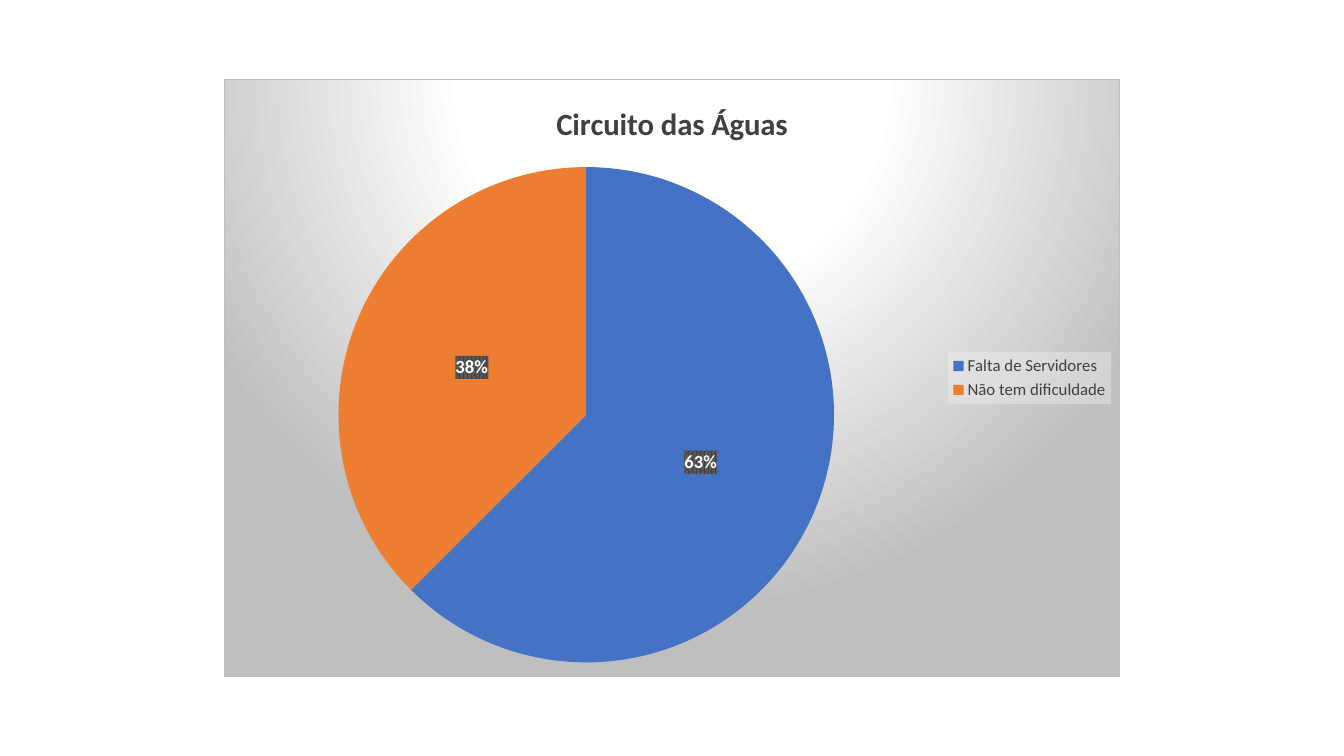
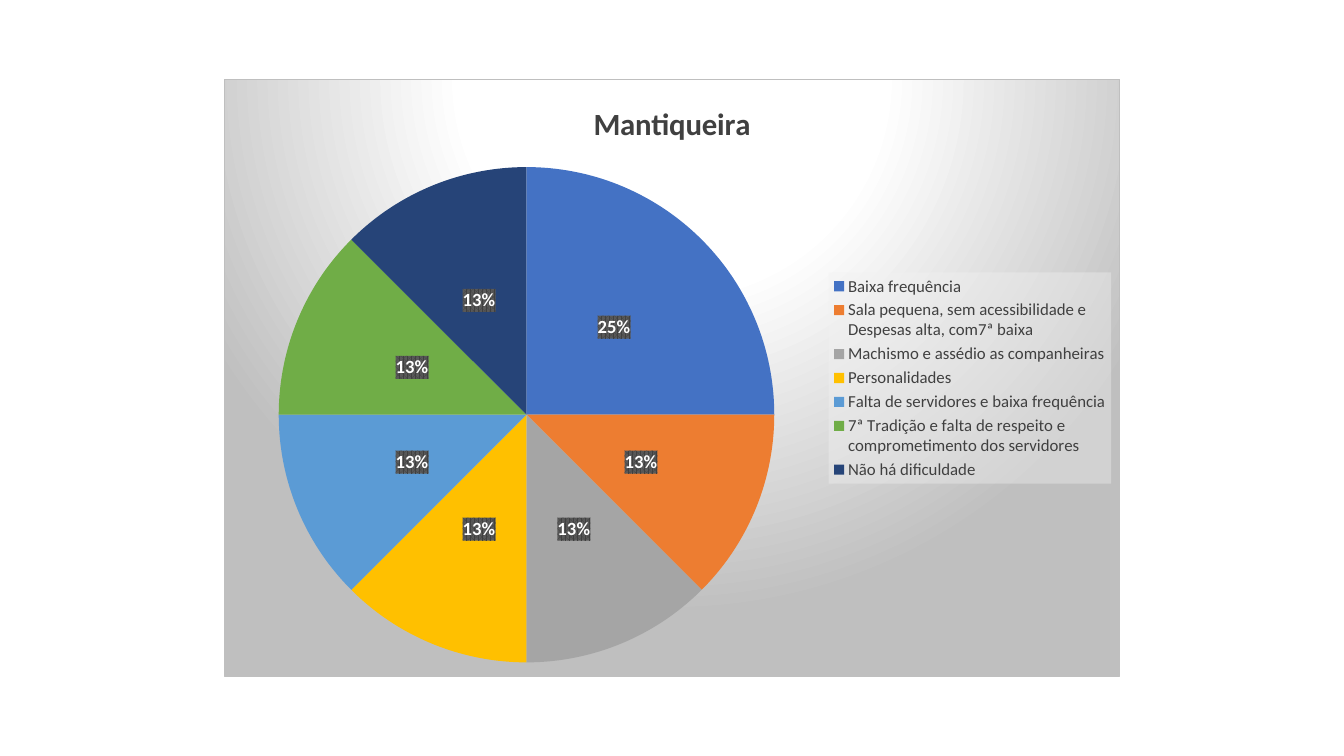
"""Build two pie chart slides on the difficulties met in each region."""
from pptx import Presentation
from pptx.chart.data import CategoryChartData
from pptx.dml.color import RGBColor
from pptx.enum import chart as kinds
from pptx.oxml import parse_xml
from pptx.util import Cm, Pt

FONT = "Calibri"
DARK = RGBColor(0x40, 0x40, 0x40)
GRAY = RGBColor(0x59, 0x59, 0x59)
PALE = RGBColor(0xF2, 0xF2, 0xF2)
EDGE = RGBColor(0xBF, 0xBF, 0xBF)
BLACK = RGBColor(0, 0, 0)
WHITE = RGBColor(0xFF, 0xFF, 0xFF)
HUES = [RGBColor.from_string(h) for h in (
    "4472C4", "ED7D31", "A5A5A5", "FFC000", "5B9BD5", "70AD47", "264478")]

PIES = [
    ("Circuito das Águas", [
        ("Falta de Servidores", 60),
        ("Não tem dificuldade", 36),
    ]),
    ("Mantiqueira", [
        ("Baixa frequência", 24),
        ("Sala pequena, sem acessibilidade e Despesas alta, com7ª baixa", 12),
        ("Machismo e assédio as companheiras", 12),
        ("Personalidades", 12),
        ("Falta de servidores e baixa frequência", 12),
        ("7ª Tradição e falta de respeito e comprometimento dos servidores", 12),
        ("Não há dificuldade", 12),
    ]),
]

WIDE, HIGH = Cm(33.87), Cm(19.05)
BOX_W, BOX_H = Cm(22.58), Cm(15.06)

STOPS = "".join(
    f'<a:gs pos="{pos * 1000}"><a:srgbClr val="{hue}"/></a:gs>'
    for pos, hue in ((0, WHITE), (39, WHITE), (100, EDGE)))
GLOW = (
    f'<a:gradFill><a:gsLst>{STOPS}</a:gsLst><a:path path="circle">'
    '<a:fillToRect l="50000" t="-80000" r="50000" b="180000"/></a:path></a:gradFill>'
    f'<a:ln w="9525"><a:solidFill><a:srgbClr val="{EDGE}"/></a:solidFill></a:ln>')
HATCH = (
    f'<a:pattFill prst="pct75"><a:fgClr><a:srgbClr val="{DARK}"/></a:fgClr>'
    f'<a:bgClr><a:srgbClr val="{GRAY}"/></a:bgClr></a:pattFill>')
VEIL = (
    f'<a:solidFill><a:srgbClr val="{PALE}"><a:alpha val="39000"/></a:srgbClr>'
    '</a:solidFill>')
SPACES = (
    'xmlns:c="http://schemas.openxmlformats.org/drawingml/2006/chart" '
    'xmlns:a="http://schemas.openxmlformats.org/drawingml/2006/main"')


def style(font, size, color, bold=False):
    font.name, font.size, font.bold = FONT, Pt(size), bold
    font.color.rgb = color


def paint(chart, place, fill):
    text = chart.element.xpath(f"{place}c:txPr")[0]
    text.addprevious(parse_xml(f"<c:spPr {SPACES}>{fill}</c:spPr>"))


def add_pie(slide, title, rows):
    data = CategoryChartData()
    data.categories = [name for name, _ in rows]
    data.add_series(title, [value for _, value in rows])
    chart = slide.shapes.add_chart(
        kinds.XL_CHART_TYPE.PIE, (WIDE - BOX_W) // 2, (HIGH - BOX_H) // 2,
        BOX_W, BOX_H, data).chart
    style(chart.font, 10, BLACK)

    chart.has_title = True
    run = chart.chart_title.text_frame.paragraphs[0].add_run()
    run.text = title
    style(run.font, 22, DARK, True)

    chart.has_legend = True
    chart.legend.position = kinds.XL_LEGEND_POSITION.RIGHT
    chart.legend.include_in_layout = False
    style(chart.legend.font, 12, DARK)

    plot = chart.plots[0]
    plot.vary_by_categories = True
    for spot, hue in zip(range(len(rows)), HUES):
        fill = plot.series[0].points[spot].format.fill
        fill.solid()
        fill.fore_color.rgb = hue

    plot.has_data_labels = True
    labels = plot.data_labels
    labels.show_percentage, labels.show_value = True, False
    labels.number_format, labels.number_format_is_linked = "0%", False
    labels.position = kinds.XL_LABEL_POSITION.CENTER
    style(labels.font, 13.3, WHITE, True)

    paint(chart, "", GLOW)
    paint(chart, ".//c:legend/", VEIL)
    paint(chart, ".//c:dLbls/", HATCH)


def main():
    deck = Presentation()
    deck.slide_width, deck.slide_height = WIDE, HIGH
    for title, rows in PIES:
        add_pie(deck.slides.add_slide(deck.slide_layouts[6]), title, rows)
    deck.save("out.pptx")


if __name__ == "__main__":
    main()
